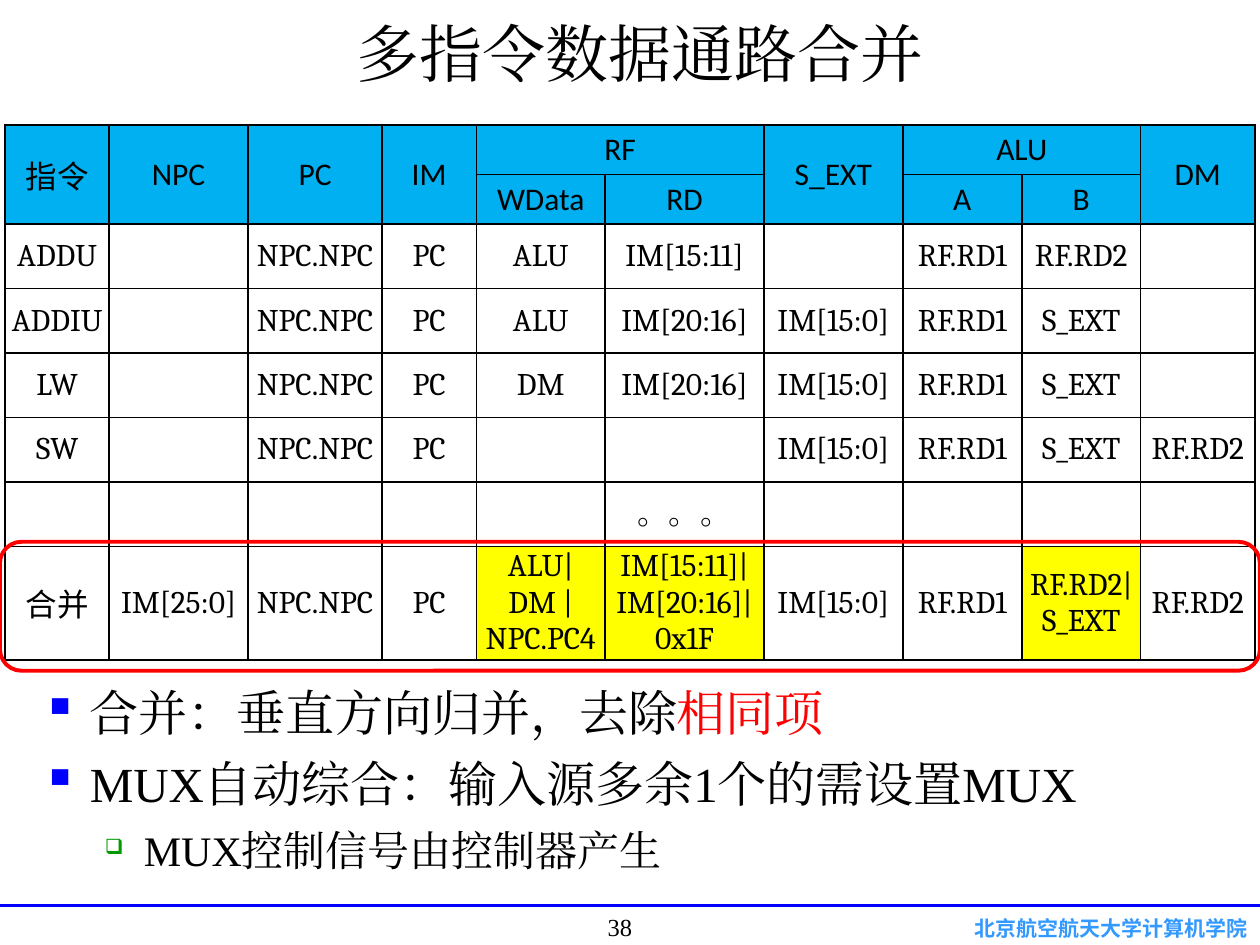
from pptx import Presentation
from pptx.util import Pt
from pptx.dml.color import RGBColor as Rgb
from pptx.enum.shapes import MSO_SHAPE as Shape, MSO_CONNECTOR as Wire
from pptx.enum.text import PP_ALIGN as Align, MSO_ANCHOR as Anchor
from pptx.oxml.ns import qn
from lxml.etree import SubElement as Sub

HUES = {
    "black": "000000", "white": "FFFFFF", "head": "00B0F0", "mark": "FFFF00",
    "red": "FF0000", "blue": "0000FF", "green": "009900", "foot": "3399FF",
}
SERIF, SANS, CELL, HAN = "Times New Roman", "Calibri", "Cambria", "Noto Sans CJK SC"


def hue(name):
    return Rgb.from_string(HUES[name])


def write(par, text, font=SERIF, size=18, color="black", bold=False, align=None):
    if align is not None:
        par.alignment = align
    run = par.add_run()
    run.text = text
    run.font.name = font
    run.font.size = Pt(size)
    run.font.bold = bold
    run.font.color.rgb = hue(color)
    Sub(run._r.get_or_add_rPr(), qn("a:ea"), typeface=font)


class Deck:
    def __init__(self):
        self.file = Presentation()
        self.file.slide_width, self.file.slide_height = Pt(720), Pt(540)
        self.slide = self.file.slides.add_slide(self.file.slide_layouts[5])
        self.items = self.slide.shapes

    def title(self, text, x, y, w, h):
        head = self.items.title
        head.left, head.top, head.width, head.height = map(Pt, (x, y, w, h))
        head.text_frame.vertical_anchor = Anchor.MIDDLE
        write(head.text_frame.paragraphs[0], text, size=36, align=Align.CENTER)

    def box(self, x, y, w, h, top=3.6):
        shape = self.items.add_textbox(*map(Pt, (x, y, w, h)))
        frame = shape.text_frame
        frame.word_wrap = True
        frame.margin_top = Pt(top)
        return shape

    def label(self, text, x, y, w, h, top=3.6, **style):
        shape = self.box(x, y, w, h, top)
        write(shape.text_frame.paragraphs[0], text, **style)

    def list(self, items, x, y, w, h):
        shape = self.box(x, y, w, h, top=7)
        shape.fill.solid()
        shape.fill.fore_color.rgb = hue("white")
        frame = shape.text_frame
        looks = [(27.4, -27.4, "blue", 100, "▪", 28), (58.3, -22.3, "green", 50, "❑", 24)]
        for i, (level, runs) in enumerate(items):
            par = frame.add_paragraph() if i else frame.paragraphs[0]
            left, hang, tint, scale, sign, size = looks[level]
            par.level = level
            props = par._p.get_or_add_pPr()
            props.set("marL", str(Pt(left)))
            props.set("indent", str(Pt(hang)))
            Sub(Sub(props, qn("a:buClr")), qn("a:srgbClr"), val=HUES[tint])
            Sub(props, qn("a:buSzPct"), val=str(scale * 1000))
            Sub(props, qn("a:buChar"), char=sign)
            if i:
                par.space_before = Pt(7)
            for text, color in runs:
                write(par, text, size=size, color=color)

    def edge(self, cell):
        props = cell._tc.get_or_add_tcPr()
        for side in ("lnL", "lnR", "lnT", "lnB"):
            line = Sub(props, qn("a:" + side), w=str(Pt(1)))
            Sub(Sub(line, qn("a:solidFill")), qn("a:srgbClr"), val=HUES["black"])

    def cell(self, cell, text, font, fill):
        self.edge(cell)
        cell.margin_left = cell.margin_right = Pt(3)
        cell.margin_top = cell.margin_bottom = 0
        cell.vertical_anchor = Anchor.MIDDLE
        if fill:
            cell.fill.solid()
            cell.fill.fore_color.rgb = hue(fill)
        else:
            cell.fill.background()
        if not text:
            return
        if not text.isascii() and text != "。。。":
            font = HAN
        for i, part in enumerate(text.split("\n")):
            par = cell.text_frame.add_paragraph() if i else cell.text_frame.paragraphs[0]
            write(par, part, font=font, align=Align.CENTER)

    def table(self, rows, spans, x, y, wides, highs):
        size = (sum(wides), sum(highs))
        grid = self.items.add_table(len(rows), len(wides), *map(Pt, (x, y, *size))).table
        grid.first_row = grid.horz_banding = False
        for col, wide in zip(grid.columns, wides):
            col.width = Pt(wide)
        for row, high in zip(grid.rows, highs):
            row.height = Pt(high)
        for r, row in enumerate(rows):
            for c, text in enumerate(row):
                fill = "head" if r < 2 else "mark" if "|" in text else None
                self.cell(grid.cell(r, c), text, SANS if r < 2 else CELL, fill)
        for start, end in spans:
            grid.cell(*start).merge(grid.cell(*end))

    def frame(self, x, y, w, h, color, wide):
        shape = self.items.add_shape(Shape.ROUNDED_RECTANGLE, *map(Pt, (x, y, w, h)))
        shape.shadow.inherit = False
        shape.fill.background()
        shape.line.color.rgb = hue(color)
        shape.line.width = Pt(wide)

    def rule(self, x, y, end, color, wide):
        line = self.items.add_connector(Wire.STRAIGHT, *map(Pt, (x, y, end, y)))
        line.line.color.rgb = hue(color)
        line.line.width = Pt(wide)
        Sub(line._element.spPr, qn("a:effectLst"))


ROWS = [
    ["指令", "NPC", "PC", "IM", "RF", "", "S_EXT", "ALU", "", "DM"],
    ["", "", "", "", "WData", "RD", "", "A", "B", ""],
    ["ADDU", "", "NPC.NPC", "PC", "ALU", "IM[15:11]", "", "RF.RD1", "RF.RD2", ""],
    ["ADDIU", "", "NPC.NPC", "PC", "ALU", "IM[20:16]", "IM[15:0]", "RF.RD1", "S_EXT", ""],
    ["LW", "", "NPC.NPC", "PC", "DM", "IM[20:16]", "IM[15:0]", "RF.RD1", "S_EXT", ""],
    ["SW", "", "NPC.NPC", "PC", "", "", "IM[15:0]", "RF.RD1", "S_EXT", "RF.RD2"],
    ["", "", "", "", "", "。。。", "", "", "", ""],
    ["合并", "IM[25:0]", "NPC.NPC", "PC", "ALU|\nDM |\nNPC.PC4",
     "IM[15:11]|\nIM[20:16]|\n0x1F", "IM[15:0]", "RF.RD1", "RF.RD2|\nS_EXT", "RF.RD2"],
]
SPANS = [((0, c), (1, c)) for c in (0, 1, 2, 3, 6, 9)]
SPANS += [((0, c), (0, c + 1)) for c in (4, 7)]
WIDES = [59.5, 79.4, 76.5, 53.9, 73.7, 90.7, 79.4, 68, 68, 65.2]
HIGHS = [28.35] * 2 + [36.85] * 6
NOTES = [
    (0, [("合并：垂直方向归并，去除", "black"), ("相同项", "red")]),
    (0, [("MUX自动综合：输入源多余1个的需设置MUX", "black")]),
    (1, [("MUX控制信号由控制器产生", "black")]),
]


def main():
    deck = Deck()
    deck.label("北京航空航天大学计算机学院", 326, 523.3, 394, 14.4, top=0,
               font=HAN, size=12, color="foot", bold=True, align=Align.RIGHT)
    deck.rule(720, 517.6, 0, "blue", 1.5)
    deck.title("多指令数据通路合并", 16.8, 3.7, 697.6, 52.7)
    deck.table(ROWS, SPANS, 2.9, 71.4, WIDES, HIGHS)
    deck.list(NOTES, 16.8, 383, 686.4, 124.7)
    deck.frame(0, 309.6, 720, 73.7, "red", 2.25)
    deck.label("38", 269.3, 517.6, 170, 20, size=14, align=Align.CENTER)
    deck.file.save("out.pptx")


if __name__ == "__main__":
    main()
